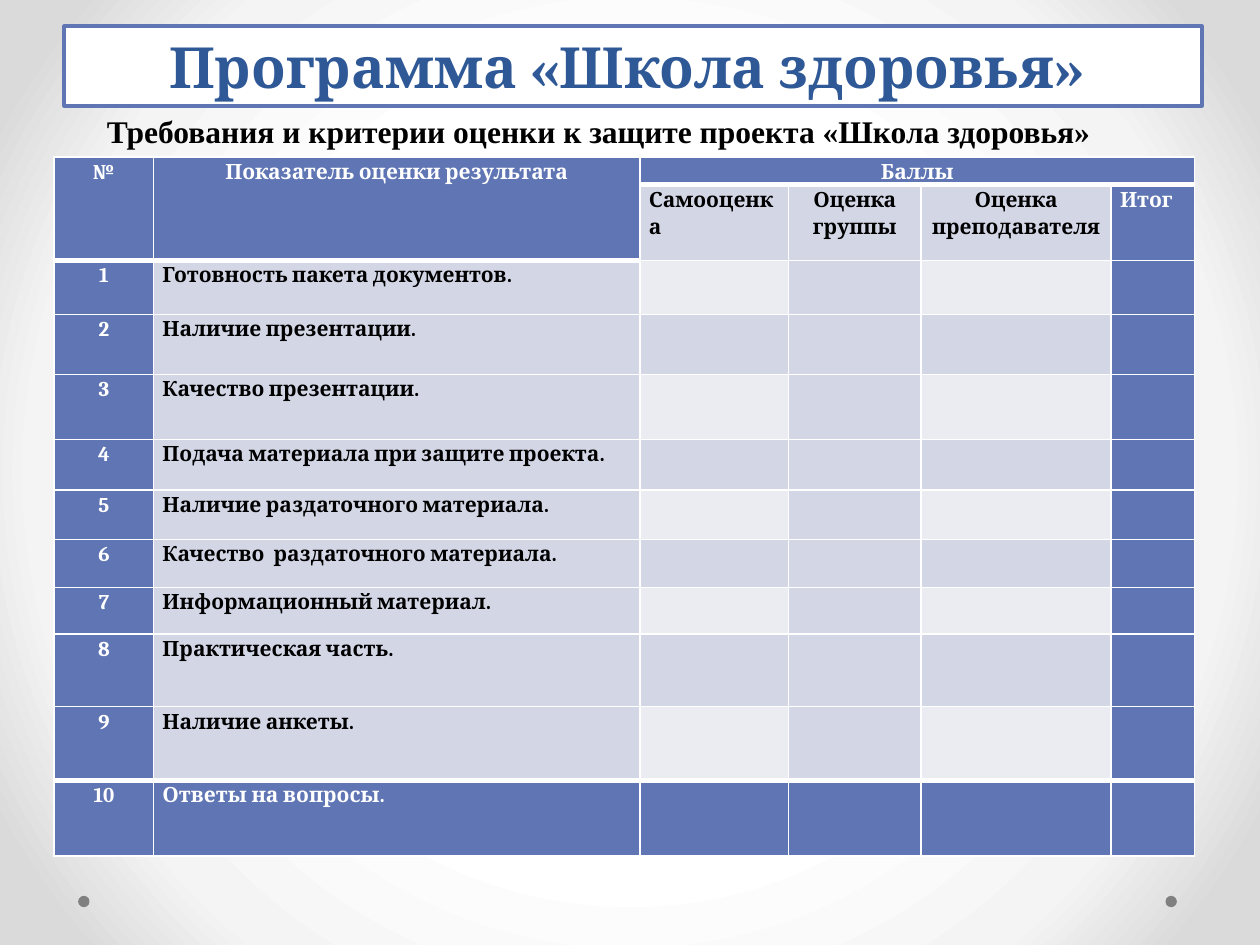
from dataclasses import dataclass
from typing import NamedTuple

from pptx import Presentation
from pptx.dml.color import RGBColor
from pptx.enum.shapes import MSO_SHAPE
from pptx.enum.text import MSO_ANCHOR, PP_ALIGN
from pptx.oxml import parse_xml
from pptx.oxml.ns import nsdecls
from pptx.util import Emu, Inches, Pt


@dataclass(frozen=True)
class Theme:
    accent: str = "6076B4"
    band: str = "D2D6E5"
    light: str = "EAECF2"
    title: str = "2F5897"
    white: str = "FFFFFF"
    black: str = "000000"
    dot: str = "808080"
    heading_font: str = "Cambria"
    body_font: str = "Times New Roman"
    title_size: float = 32.4
    subtitle_size: float = 18
    cell_size: float = 12
    thin: float = 1
    thick: float = 3
    backdrop: tuple = ((50, "FFFFFF"), (76, "F4F4F4"), (92, "DADADA"))


class Box(NamedTuple):
    """Place and size in percent of the slide's width and height."""
    x: float
    y: float
    w: float
    h: float


T = Theme()
WIDTH, HEIGHT = Inches(10), Inches(7.5)

TITLE = Box(5.1, 2.8, 90.3, 8.4)
SUBTITLE = Box(7.5, 11.2, 87.4, 5.33)
DOTS = (Box(6.2, 94.8, 0.9, 1.2), Box(92.5, 94.8, 0.9, 1.2))
TABLE_X, TABLE_Y = 4.3, 16.6
COLS = (7.9, 38.6, 11.8, 10.5, 15.1, 6.6)
ROWS = (2.8, 8, 5.73, 6.35, 6.88, 5.34, 5.24, 5.08, 4.92, 7.72, 7.78, 8)

HEADINGS = {(0, 0): "№", (0, 1): "Показатель оценки результата", (0, 2): "Баллы"}
SCORES = ("Самооценка", "Оценка группы", "Оценка преподавателя", "Итог")
CRITERIA = (
    "Готовность пакета документов.",
    "Наличие презентации.",
    "Качество презентации.",
    "Подача материала при защите проекта.",
    "Наличие раздаточного материала.",
    "Качество  раздаточного материала.",
    "Информационный материал.",
    "Практическая часть.",
    "Наличие анкеты.",
    "Ответы на вопросы.",
)
LAST_ROW, LAST_COL = len(ROWS) - 1, len(COLS) - 1


def across(percent: float) -> Emu:
    return Emu(round(WIDTH * percent / 100))


def down(percent: float) -> Emu:
    return Emu(round(HEIGHT * percent / 100))


def place(box: Box) -> tuple:
    return across(box.x), down(box.y), across(box.w), down(box.h)


def write(p, text: str, font: str, size: float, color: str, align=PP_ALIGN.LEFT) -> None:
    p.text = text
    p.alignment = align
    p.font.name, p.font.size, p.font.bold = font, Pt(size), True
    p.font.color.rgb = RGBColor.from_string(color)


def add_backdrop(s) -> None:
    s.background.fill.solid()
    bg_pr = s.background._cSld.bg.bgPr
    stops = "".join(f'<a:gs pos="{pos * 1000}"><a:srgbClr val="{color}"/></a:gs>'
                    for pos, color in T.backdrop)
    bg_pr.replace(bg_pr[0], parse_xml(
        f'<a:gradFill {nsdecls("a")} rotWithShape="1"><a:gsLst>{stops}</a:gsLst>'
        '<a:path path="circle"><a:fillToRect l="50000" t="50000" r="50000" b="50000"/>'
        '</a:path></a:gradFill>'))


def add_filled(s, kind: MSO_SHAPE, box: Box, color: str):
    sp = s.shapes.add_shape(kind, *place(box))
    sp.shadow.inherit = False
    sp.fill.solid()
    sp.fill.fore_color.rgb = RGBColor.from_string(color)
    sp.line.fill.background()
    return sp


def add_title(s) -> None:
    sp = add_filled(s, MSO_SHAPE.RECTANGLE, TITLE, T.white)
    sp.line.color.rgb = RGBColor.from_string(T.accent)
    sp.line.width = Pt(2.25)
    tf = sp.text_frame
    tf.vertical_anchor = MSO_ANCHOR.MIDDLE
    tf.margin_top = tf.margin_bottom = 0
    write(tf.paragraphs[0], "Программа «Школа здоровья» ", T.heading_font,
          T.title_size, T.title, PP_ALIGN.CENTER)


def add_subtitle(s) -> None:
    tf = s.shapes.add_textbox(*place(SUBTITLE)).text_frame
    tf.word_wrap = True
    write(tf.paragraphs[0], "Требования и критерии оценки к защите проекта «Школа здоровья»",
          T.body_font, T.subtitle_size, T.black)


def cell_text(row: int, col: int) -> str:
    if row == 0:
        return HEADINGS.get((row, col), "")
    if row == 1:
        return SCORES[col - 2] if col > 1 else ""
    return {0: str(row - 1), 1: CRITERIA[row - 2]}.get(col, "")


def cell_fill(row: int, col: int) -> str:
    heading = row == 0 or (row == 1 and col < 2)
    if heading or row == LAST_ROW or col in (0, LAST_COL):
        return T.accent
    return T.light if row > 1 and row % 2 == 0 and col in (2, 4) else T.band


def cell_align(row: int, col: int) -> PP_ALIGN:
    centred = row == 0 or col == 0 or (row == 1 and col in (3, 4))
    return PP_ALIGN.CENTER if centred else PP_ALIGN.LEFT


def set_borders(cell, row: int, col: int) -> None:
    thick_top = row == LAST_ROW or (row == 1 and col > 1) or (row == 2 and col < 2)
    thick_bottom = row in (0, LAST_ROW - 1) or (row == 1 and col < 2)
    widths = {"L": T.thin, "R": T.thin,
              "T": T.thick if thick_top else T.thin,
              "B": T.thick if thick_bottom else T.thin}
    tc_pr = cell._tc.get_or_add_tcPr()
    for side, width in widths.items():
        tc_pr.append(parse_xml(
            f'<a:ln{side} {nsdecls("a")} w="{Pt(width)}"><a:solidFill>'
            f'<a:srgbClr val="{T.white}"/></a:solidFill></a:ln{side}>'))


def style_cell(cell, row: int, col: int) -> None:
    fill = cell_fill(row, col)
    set_borders(cell, row, col)
    cell.fill.solid()
    cell.fill.fore_color.rgb = RGBColor.from_string(fill)
    cell.margin_left = cell.margin_right = Inches(0.07)
    cell.margin_top = cell.margin_bottom = 0
    p = cell.text_frame.paragraphs[0]
    write(p, cell_text(row, col), T.heading_font, T.cell_size,
          T.white if fill == T.accent else T.black, cell_align(row, col))
    if p.text:
        p.line_spacing, p.space_after = 1.15, Pt(10)


def add_score_table(s) -> None:
    box = Box(TABLE_X, TABLE_Y, sum(COLS), sum(ROWS))
    table = s.shapes.add_table(len(ROWS), len(COLS), *place(box)).table
    table.first_col = table.last_col = table.last_row = True
    for column, share in zip(table.columns, COLS):
        column.width = across(share)
    for table_row, share in zip(table.rows, ROWS):
        table_row.height = down(share)
    for row in range(len(ROWS)):
        for col in range(len(COLS)):
            style_cell(table.cell(row, col), row, col)
    # Headings that span rows or columns
    for col in (0, 1):
        table.cell(0, col).merge(table.cell(1, col))
    table.cell(0, 2).merge(table.cell(0, LAST_COL))


def main() -> None:
    prs = Presentation()
    prs.slide_width, prs.slide_height = WIDTH, HEIGHT
    s = prs.slides.add_slide(prs.slide_layouts[6])
    # Background and corner dots
    add_backdrop(s)
    for dot in DOTS:
        add_filled(s, MSO_SHAPE.OVAL, dot, T.dot)
    # Title, scores and subtitle
    add_title(s)
    add_score_table(s)
    add_subtitle(s)
    prs.save("out.pptx")


if __name__ == "__main__":
    main()
